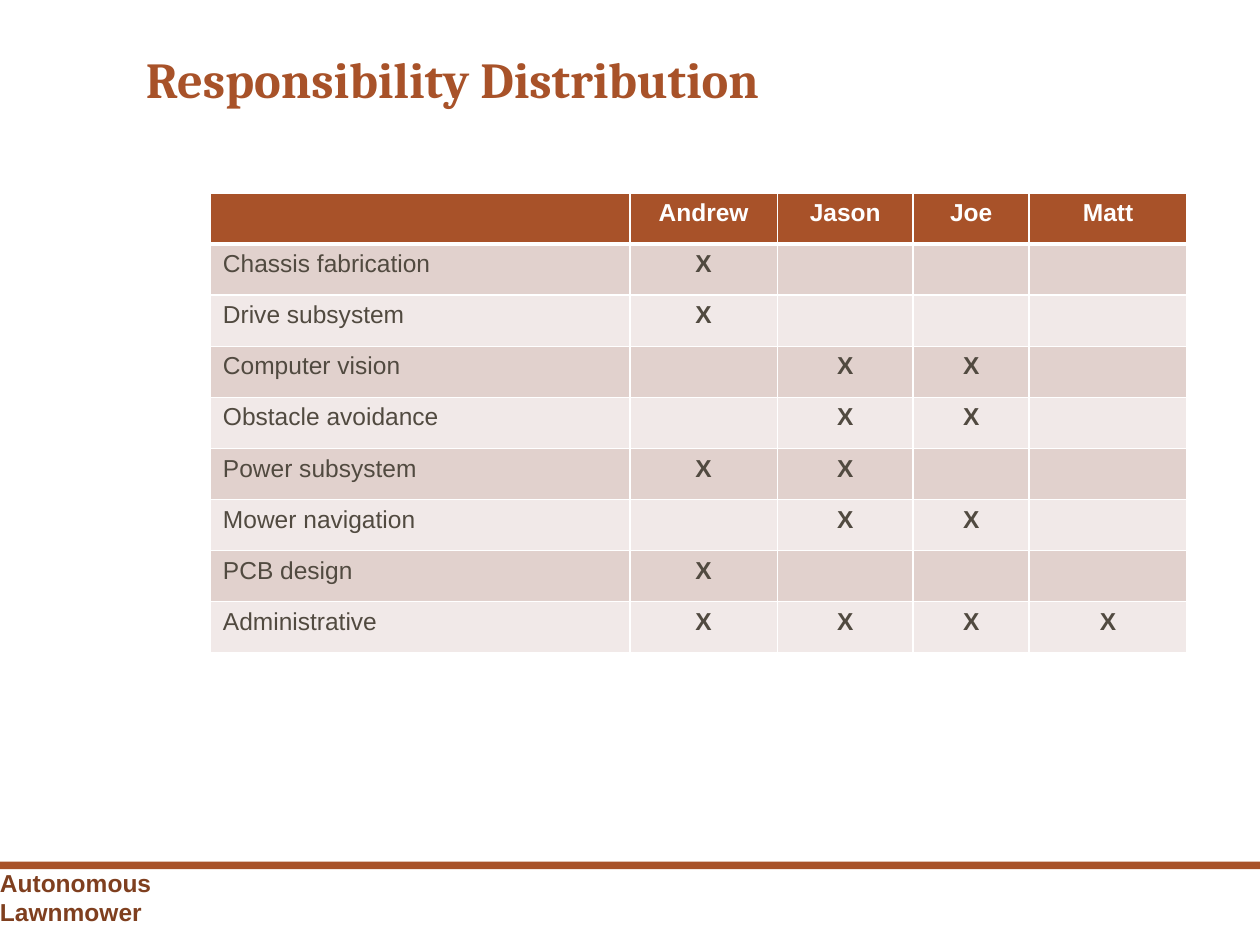
from lxml import etree
from pptx import Presentation
from pptx.dml.color import RGBColor
from pptx.enum.shapes import MSO_SHAPE
from pptx.enum.text import MSO_ANCHOR, PP_ALIGN
from pptx.oxml.ns import qn
from pptx.util import Cm, Pt

RUST = RGBColor(0xA8, 0x52, 0x29)
DARK_RUST = RGBColor(0x7F, 0x3F, 0x1F)
INK = RGBColor(0x51, 0x4A, 0x40)
WHITE = RGBColor(0xFF, 0xFF, 0xFF)
BANDS = (RGBColor(0xE1, 0xD1, 0xCD), RGBColor(0xF1, 0xE9, 0xE8))

MEMBERS = ["Andrew", "Jason", "Joe", "Matt"]
RESPONSIBILITIES = {
    "Chassis fabrication": ["Andrew"],
    "Drive subsystem": ["Andrew"],
    "Computer vision": ["Jason", "Joe"],
    "Obstacle avoidance": ["Jason", "Joe"],
    "Power subsystem": ["Andrew", "Jason"],
    "Mower navigation": ["Jason", "Joe"],
    "PCB design": ["Andrew"],
    "Administrative": MEMBERS,
}
COLUMN_SHARES = (8.46, 2.97, 2.74, 2.34, 3.18)


def format_paragraph(paragraph, size, font_name, color, bold):
    for run in paragraph.runs:
        run.font.size = Pt(size)
        run.font.name = font_name
        run.font.color.rgb = color
        run.font.bold = bold


def set_cell_borders(cell, top, bottom):
    properties = cell._tc.get_or_add_tcPr()
    for side, width in (("L", 1), ("R", 1), ("T", top), ("B", bottom)):
        line = etree.SubElement(properties, qn(f"a:ln{side}"), w=str(Pt(width)))
        fill = etree.SubElement(line, qn("a:solidFill"))
        etree.SubElement(fill, qn("a:srgbClr"), val=str(WHITE))


def add_title(slide, left, top, width, height):
    text_frame = slide.shapes.add_textbox(left, top, width, height).text_frame
    text_frame.word_wrap = True
    text_frame.vertical_anchor = MSO_ANCHOR.BOTTOM
    text_frame.text = "Responsibility Distribution"
    paragraph = text_frame.paragraphs[0]
    paragraph.line_spacing = 0.9
    format_paragraph(paragraph, 28.8, "Cambria", RUST, True)


def add_responsibility_table(slide, left, top, width, height):
    rows = [["", *MEMBERS]]
    for task, owners in RESPONSIBILITIES.items():
        rows.append([task] + ["X" if name in owners else "" for name in MEMBERS])

    table = slide.shapes.add_table(
        len(rows), len(rows[0]), left, top, width, height).table
    for column, share in zip(table.columns, COLUMN_SHARES):
        column.width = int(width * share / sum(COLUMN_SHARES))

    for row_index, values in enumerate(rows):
        is_header = row_index == 0
        for column_index, value in enumerate(values):
            cell = table.cell(row_index, column_index)
            # A thicker rule separates the header from the body
            set_cell_borders(cell, 3 if row_index == 1 else 1, 3 if is_header else 1)
            cell.fill.solid()
            cell.fill.fore_color.rgb = RUST if is_header else BANDS[(row_index - 1) % 2]
            if not value:
                continue
            cell.text = value
            paragraph = cell.text_frame.paragraphs[0]
            if column_index > 0:
                paragraph.alignment = PP_ALIGN.CENTER
            format_paragraph(paragraph, 14, "Arial",
                             WHITE if is_header else INK, column_index > 0)


def add_footer(slide, left, top, width, height):
    # Full-width bar
    bar = slide.shapes.add_shape(MSO_SHAPE.RECTANGLE, left, top, width, Cm(0.15))
    bar.shadow.inherit = False
    bar.fill.solid()
    bar.fill.fore_color.rgb = RUST
    bar.line.fill.background()

    # Project name, flush with the slide edge and wrapped after its first word
    inset = Cm(0.25)
    label = slide.shapes.add_textbox(left - inset, top, Cm(6.53), height)
    text_frame = label.text_frame
    text_frame.word_wrap = True
    text_frame.margin_left = inset
    text_frame.margin_right = Cm(2)
    text_frame.text = "Autonomous Lawnmower"
    format_paragraph(text_frame.paragraphs[0], 14, "Arial", DARK_RUST, True)


def main():
    presentation = Presentation()
    presentation.slide_width = Cm(25.4)
    presentation.slide_height = Cm(19.05)
    slide = presentation.slides.add_slide(presentation.slide_layouts[6])

    add_footer(slide, Cm(0), Cm(17.37), presentation.slide_width, Cm(0.84))
    add_title(slide, Cm(2.69), Cm(1.07), Cm(21), Cm(1.27))
    add_responsibility_table(slide, Cm(4.24), Cm(3.89), Cm(19.69), Cm(9.27))

    presentation.save("out.pptx")


if __name__ == "__main__":
    main()
